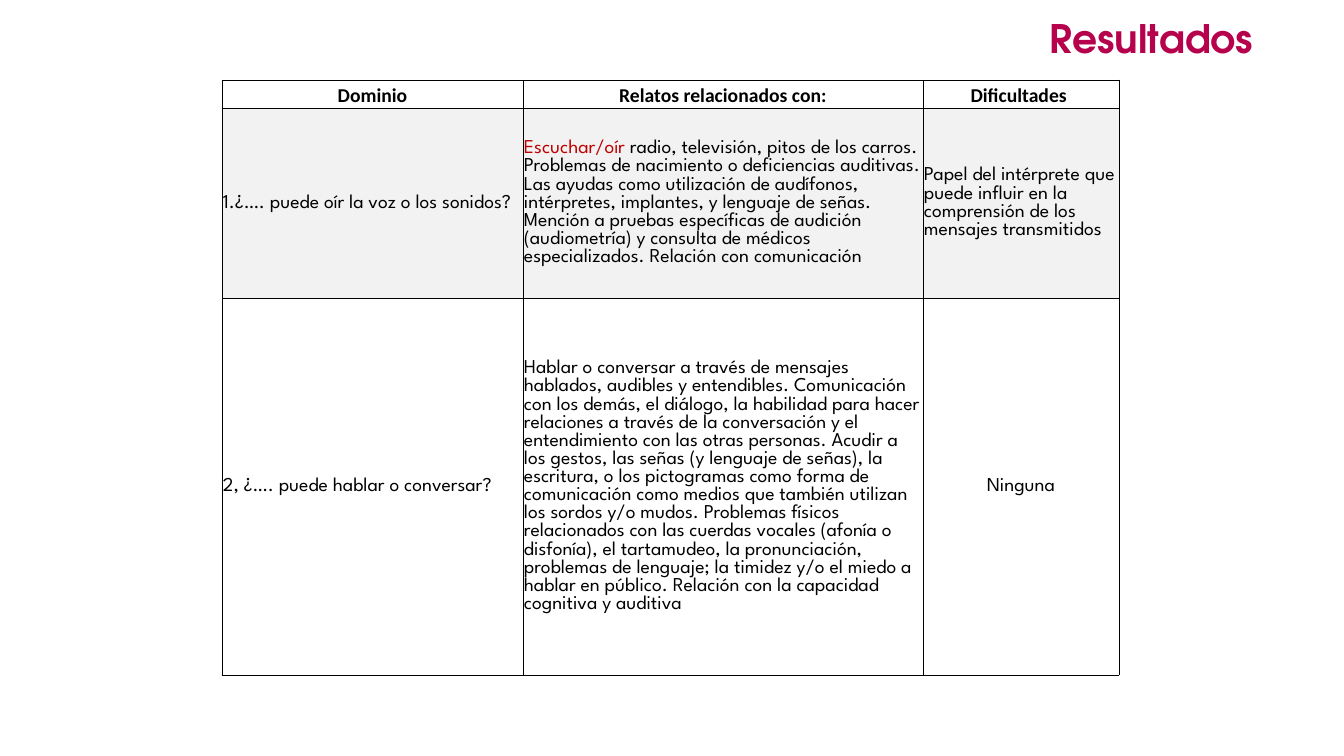
from lxml import etree
from pptx import Presentation
from pptx.dml.color import RGBColor
from pptx.enum.text import MSO_ANCHOR, PP_ALIGN
from pptx.oxml.ns import qn
from pptx.util import Emu, Pt

LEFT, CENTER, RIGHT = PP_ALIGN.LEFT, PP_ALIGN.CENTER, PP_ALIGN.RIGHT
MIDDLE, BOTTOM = MSO_ANCHOR.MIDDLE, MSO_ANCHOR.BOTTOM

# Content
COLORS = {"title": "B6014C", "text": "000000", "accent": "C00000",
          "band": "F2F2F2", "border": "000000"}
HEAD_FONT, BODY_FONT, TITLE_FONT = "Calibri", "League Spartan", "TeX Gyre Adventor"
TITLE = "Resultados"
HEADERS = ["Dominio", "Relatos relacionados con:", "Dificultades "]
# Each cell is a list of (text, colour) runs; "\n" is a line break
ROWS = [
    [[("¿…. puede oír la voz o los sonidos?", "text")],
     [("Escuchar/oír ", "accent"),
      ("radio, televisión, pitos de los carros. Problemas de nacimiento o "
       "deficiencias auditivas. Las ayudas como utilización de audífonos, "
       "intérpretes, implantes, y lenguaje de señas. Mención a pruebas "
       "específicas de audición (audiometría) y consulta de médicos "
       "especializados. Relación con comunicación", "text")],
     [("Papel del intérprete que puede influir en la comprensión de los "
       "mensajes transmitidos", "text")]],
    [[("2, ¿…. puede hablar o conversar?", "text")],
     [("Hablar o conversar a través de mensajes hablados, audibles y "
       "entendibles. Comunicación con los demás, el diálogo, la habilidad para "
       "hacer relaciones a través de la conversación y el entendimiento con las "
       "otras personas. Acudir a los gestos, las señas (y lenguaje de señas), "
       "la escritura, o los pictogramas como forma de comunicación como medios "
       "que también utilizan los sordos y/o mudos. Problemas físicos \n"
       "relacionados con las cuerdas vocales (afonía o disfonía), el tartamudeo, "
       "la pronunciación, problemas de lenguaje; la timidez y/o el miedo a "
       "hablar en público. Relación con la capacidad cognitiva y auditiva",
       "text")],
     [("Ninguna", "text")]],
]
NUMBERED, CENTERED, BANDED = (1, 0), (2, 2), 1

# Layout in px
SLIDE_W, SLIDE_H = 1344, 756
TITLE_BOX = (104, -32, 1159, 146)
TABLE_X, TABLE_Y = 222, 80
COL_W = [301, 400, 196]
ROW_H = [28, 190, 377]


def px(n):
    return Emu(round(n * 914400 / 100.8))


def add_run(p, text, size, font, color, bold):
    for i, line in enumerate(text.split("\n")):
        if i:
            p.add_line_break()
        r = p.add_run()
        r.text = line
        r.font.size, r.font.name, r.font.bold = Pt(size), font, bold
        r.font.color.rgb = RGBColor.from_string(COLORS[color])


def add_borders(cell):
    tcPr = cell._tc.get_or_add_tcPr()
    for side in ("a:lnL", "a:lnR", "a:lnT", "a:lnB"):
        ln = etree.SubElement(tcPr, qn(side), w=str(Pt(0.5)))
        fill = etree.SubElement(ln, qn("a:solidFill"))
        etree.SubElement(fill, qn("a:srgbClr"), val=COLORS["border"])


def add_number(p):
    pPr = p._p.get_or_add_pPr()
    pPr.set("marL", "0")
    pPr.set("indent", "0")
    clr = etree.SubElement(pPr, qn("a:buClr"))
    etree.SubElement(clr, qn("a:srgbClr"), val=COLORS["text"])
    etree.SubElement(pPr, qn("a:buFont"), typeface=BODY_FONT)
    etree.SubElement(pPr, qn("a:buAutoNum"), type="arabicPeriod")


prs = Presentation()
prs.slide_width, prs.slide_height = px(SLIDE_W), px(SLIDE_H)
s = prs.slides.add_slide(prs.slide_layouts[6])

# Table
grid = [[[(h, "text")] for h in HEADERS]] + ROWS
table = s.shapes.add_table(len(grid), len(COL_W), px(TABLE_X), px(TABLE_Y),
                           px(sum(COL_W)), px(sum(ROW_H))).table
table.first_row = table.horz_banding = False
for col, w in zip(table.columns, COL_W):
    col.width = px(w)
for row, h in zip(table.rows, ROW_H):
    row.height = px(h)

for i, row in enumerate(grid):
    head = i == 0
    for j, runs in enumerate(row):
        cell = table.cell(i, j)
        cell.margin_left = cell.margin_right = cell.margin_top = px(1)
        cell.margin_bottom = 0
        cell.vertical_anchor = BOTTOM if head else MIDDLE
        add_borders(cell)
        if i == BANDED:
            cell.fill.solid()
            cell.fill.fore_color.rgb = RGBColor.from_string(COLORS["band"])
        else:
            cell.fill.background()
        p = cell.text_frame.paragraphs[0]
        p.alignment = CENTER if head or (i, j) == CENTERED else LEFT
        if (i, j) == NUMBERED:
            add_number(p)
        for text, color in runs:
            add_run(p, text, 14, HEAD_FONT if head else BODY_FONT, color, head)

# Title
tf = s.shapes.add_textbox(*map(px, TITLE_BOX)).text_frame
tf.word_wrap = True
tf.vertical_anchor = MIDDLE
p = tf.paragraphs[0]
p.alignment = RIGHT
p.line_spacing = 0.9
add_run(p, TITLE, 28, TITLE_FONT, "title", True)

prs.save("out.pptx")
